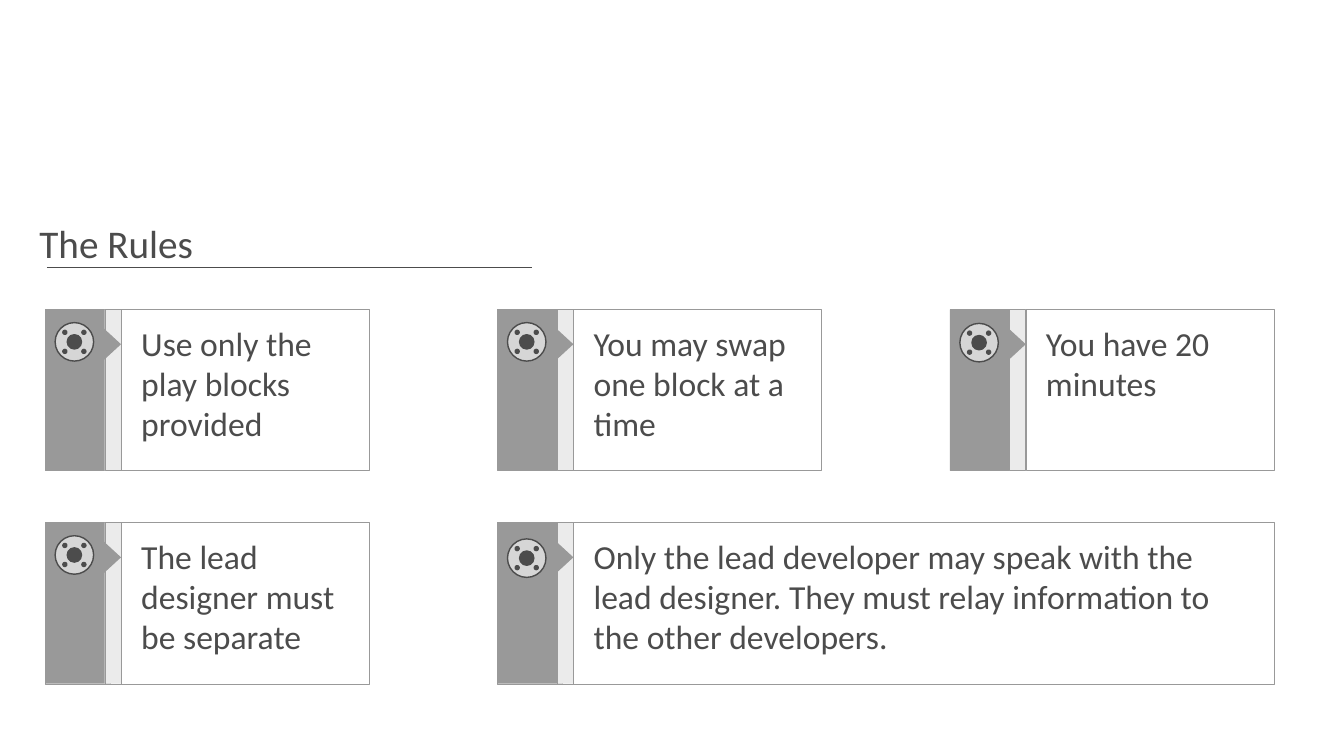
from dataclasses import dataclass
from itertools import product

from pptx import Presentation
from pptx.dml.color import RGBColor
from pptx.enum.shapes import MSO_CONNECTOR, MSO_SHAPE
from pptx.enum.text import MSO_ANCHOR, MSO_AUTO_SIZE, PP_ALIGN
from pptx.oxml import parse_xml
from pptx.oxml.ns import nsdecls
from pptx.util import Cm, Pt

TITLE = "The Rules"
# text, column, row, columns spanned, top of the icon inside the card
RULES = [
    ("Use only the play blocks provided", 0, 0, 1, 0.33),
    ("You may swap one block at a time", 1, 0, 1, 0.33),
    ("You have 20 minutes", 2, 0, 1, 0.35),
    ("The lead designer must be separate", 0, 1, 1, 0.33),
    ("Only the lead developer may speak with the lead designer. "
     "They must relay information to the other developers.", 1, 1, 2, 0.41),
]


@dataclass(frozen=True)
class Theme:
    font: str = "Calibri"
    title_size: int = 28
    rule_size: int = 24
    ink: str = "4C4C4C"
    bar: str = "999999"
    strip: str = "EBEBEB"
    disc: str = "D6D6D6"
    paper: str = "FFFFFF"


THEME = Theme()

# Lengths in centimetres
GRID_LEFT, GRID_TOP = 1.14, 7.8
COLUMN_PITCH, ROW_PITCH = 11.4, 5.37
CARD_HEIGHT = 4.06
BAR_WIDTH = 1.63
STRIP_OFFSET, STRIP_WIDTH = 1.5, 0.41
BODY_OFFSET = STRIP_OFFSET + STRIP_WIDTH
BODY_WIDTH = 6.25
POINTER_WIDTH, POINTER_HEIGHT = 0.79, 0.43
POINTER_OFFSET, POINTER_TOP = 1.3, 0.66
ICON_OFFSET = 0.25
DISC, HUB, STUD, STUD_DISTANCE = 0.97, 0.36, 0.1, 0.24


def add_block(shapes, kind, left, top, width, height, fill, line=None, weight=0.25):
    block = shapes.add_shape(kind, Cm(left), Cm(top), Cm(width), Cm(height))
    block.shadow.inherit = False
    block.fill.solid()
    block.fill.fore_color.rgb = RGBColor.from_string(fill)
    if line:
        block.line.color.rgb = RGBColor.from_string(line)
        block.line.width = Pt(weight)
    else:
        block.line.fill.background()
    return block


def write(frame, text, size):
    frame.text = text
    frame.vertical_anchor = MSO_ANCHOR.TOP
    para = frame.paragraphs[0]
    para.alignment = PP_ALIGN.LEFT
    font = para.runs[0].font
    font.name, font.size = THEME.font, Pt(size)
    font.color.rgb = RGBColor.from_string(THEME.ink)


def add_title(page):
    title = page.shapes.title
    title.left, title.top, title.width, title.height = Cm(0.74), Cm(5.41), Cm(4.42), Cm(1.45)
    write(title.text_frame, TITLE, THEME.title_size)
    title.text_frame.word_wrap = False
    title.text_frame.auto_size = MSO_AUTO_SIZE.SHAPE_TO_FIT_TEXT

    underline = page.shapes.add_connector(
        MSO_CONNECTOR.STRAIGHT, Cm(1.18), Cm(6.74), Cm(13.41), Cm(6.74))
    underline.line.color.rgb = RGBColor.from_string(THEME.ink)
    underline.line.width = Pt(0.5)
    underline._element.spPr.append(parse_xml(f"<a:effectLst {nsdecls('a')}/>"))


def add_icon(page, left, top):
    """Draw a disc with a hub and four studs as one group."""
    icon = page.shapes.add_group_shape()
    middle_x, middle_y = left + DISC / 2, top + DISC / 2
    circles = [(0, 0, DISC, THEME.disc), (0, 0, HUB, THEME.ink)]
    circles += [(x, y, STUD, THEME.ink)
                for x, y in product((-STUD_DISTANCE, STUD_DISTANCE), repeat=2)]
    for x, y, size, fill in circles:
        add_block(icon.shapes, MSO_SHAPE.OVAL, middle_x + x - size / 2,
                  middle_y + y - size / 2, size, size, fill, THEME.ink, 1)


def add_card(page, text, column, row, span, icon_top):
    left = GRID_LEFT + column * COLUMN_PITCH
    top = GRID_TOP + row * ROW_PITCH
    body_width = BODY_WIDTH + (span - 1) * COLUMN_PITCH

    panels = [(BODY_OFFSET, body_width, THEME.paper),
              (0, BAR_WIDTH, THEME.bar),
              (STRIP_OFFSET, STRIP_WIDTH, THEME.strip)]
    body, _, _ = [
        add_block(page.shapes, MSO_SHAPE.RECTANGLE, left + offset, top,
                  width, CARD_HEIGHT, fill, THEME.bar)
        for offset, width, fill in panels]
    frame = body.text_frame
    frame.word_wrap = True
    frame.margin_left = frame.margin_right = Cm(0.51)
    frame.margin_top = frame.margin_bottom = Cm(0.33)
    write(frame, text, THEME.rule_size)

    pointer = add_block(page.shapes, MSO_SHAPE.ISOSCELES_TRIANGLE, left + POINTER_OFFSET,
                        top + POINTER_TOP, POINTER_WIDTH, POINTER_HEIGHT, THEME.bar)
    pointer.rotation = 90
    add_icon(page, left + ICON_OFFSET, top + icon_top)


def main():
    deck = Presentation()
    deck.slide_width, deck.slide_height = Cm(33.87), Cm(19.05)
    page = deck.slides.add_slide(deck.slide_layouts.get_by_name("Title Only"))
    add_title(page)
    for rule in RULES:
        add_card(page, *rule)
    deck.save("out.pptx")


if __name__ == "__main__":
    main()
